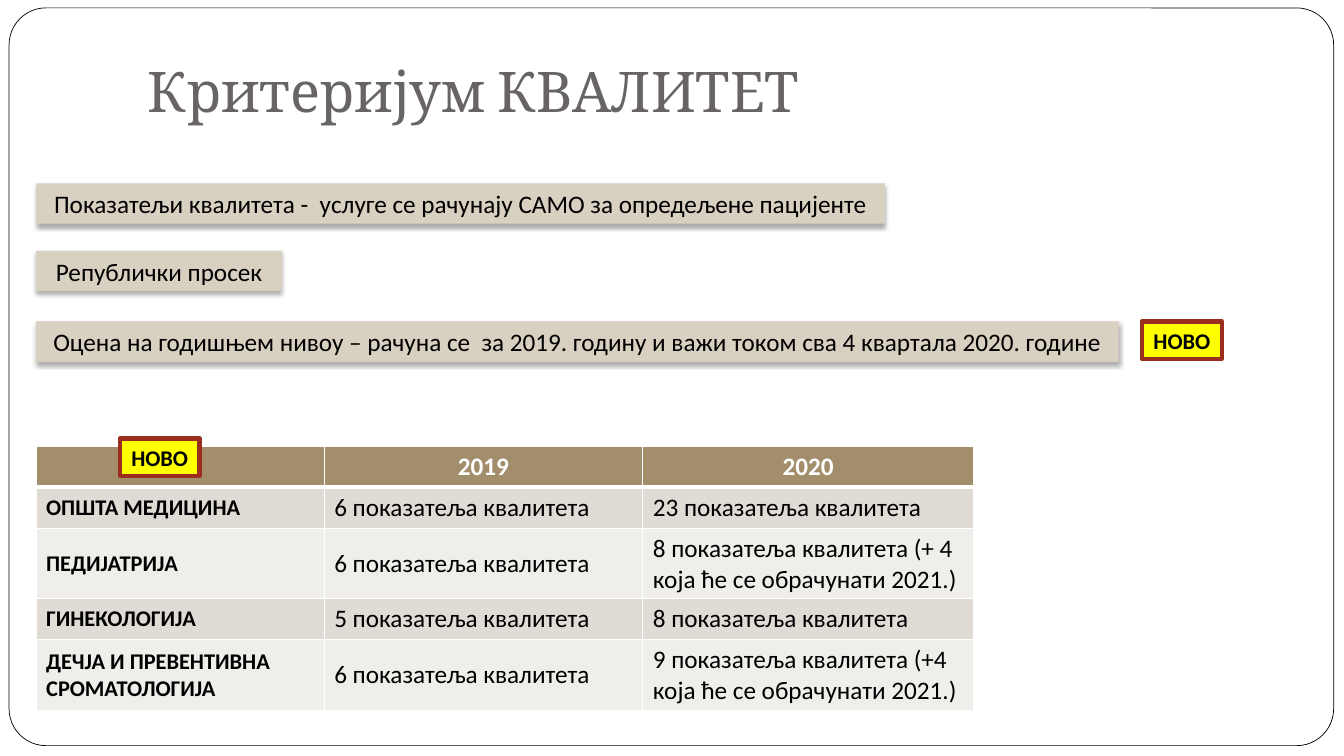
from dataclasses import dataclass

from lxml.etree import SubElement
from pptx import Presentation
from pptx.dml.color import RGBColor
from pptx.enum.shapes import MSO_SHAPE
from pptx.enum.text import MSO_ANCHOR, PP_ALIGN
from pptx.oxml import parse_xml
from pptx.oxml.ns import nsdecls, qn
from pptx.util import Cm, Pt


@dataclass(frozen=True)
class Theme:
    """Colours, fonts and type sizes of the slide."""
    head: str = "Cambria"
    body: str = "Calibri"
    black: str = "000000"
    white: str = "FFFFFF"
    grey: str = "696464"
    sand: str = "D8D0C0"
    brown: str = "A28E6A"
    bands: tuple = ("E0DBD4", "F0EEEB")
    yellow: str = "FFFF00"
    red: str = "9B2D1F"
    big: int = 40
    mid: int = 18
    small: int = 16


class Page:
    """Draws styled elements on one slide."""

    def __init__(self, slide, theme):
        self.slide = slide
        self.theme = theme

    def text(self, frame, words, size, color, bold=False, font=None, align=PP_ALIGN.LEFT):
        """Add one styled run to the first paragraph."""
        par = frame.paragraphs[0]
        par.alignment = align
        run = par.add_run()
        run.text = words
        run.font.name = font or self.theme.body
        run.font.size = Pt(size)
        run.font.bold = bold
        run.font.color.rgb = RGBColor.from_string(color)

    def shape(self, kind, box, fill, line=None, width=0):
        """Add a filled shape with an optional outline."""
        item = self.slide.shapes.add_shape(kind, *map(Cm, box))
        item.shadow.inherit = False
        item.fill.solid()
        item.fill.fore_color.rgb = RGBColor.from_string(fill)
        if line:
            item.line.color.rgb = RGBColor.from_string(line)
            item.line.width = Pt(width)
        else:
            item.line.fill.background()
        return item

    def panel(self, box):
        """Add the rounded frame around the slide."""
        look = self.theme
        item = self.shape(MSO_SHAPE.ROUNDED_RECTANGLE, box, look.white, look.black, 0.5)
        item.adjustments[0] = 0.05

    def title(self, box, words):
        """Add the heading."""
        frame = self.slide.shapes.add_textbox(*map(Cm, box)).text_frame
        frame.word_wrap = True
        frame.vertical_anchor = MSO_ANCHOR.BOTTOM
        frame.margin_bottom = Cm(0.25)
        look = self.theme
        self.text(frame, words, look.big, look.grey, font=look.head)

    def label(self, item, words, size, bold=False):
        """Centre one line of text in a shape."""
        frame = item.text_frame
        frame.word_wrap = False
        frame.vertical_anchor = MSO_ANCHOR.MIDDLE
        self.text(frame, words, size, self.theme.black, bold, align=PP_ALIGN.CENTER)

    def strip(self, box, words):
        """Add a sand strip with a soft shadow."""
        item = self.shape(MSO_SHAPE.RECTANGLE, box, self.theme.sand)
        glow = item._element.spPr.find(qn("a:effectLst"))
        shade = SubElement(glow, qn("a:outerShdw"), blurRad=str(Pt(3.5)),
                           dist=str(Pt(2.2)), dir="5400000", rotWithShape="0")
        tone = SubElement(shade, qn("a:srgbClr"), val=self.theme.black)
        SubElement(tone, qn("a:alpha"), val="32000")
        self.label(item, words, self.theme.mid)

    def badge(self, left, top, words):
        """Add a yellow badge with a red outline."""
        look = self.theme
        box = (left, top, 2.01, 0.94)
        item = self.shape(MSO_SHAPE.RECTANGLE, box, look.yellow, look.red, 3)
        self.label(item, words, look.small, True)

    def edge(self, cell, base):
        """Draw the white borders of a cell."""
        props = cell._tc.get_or_add_tcPr()
        for spot, side in enumerate("LRTB"):
            width = Pt(base if side == "B" else 1)
            props.insert(spot, parse_xml(
                f'<a:ln{side} {nsdecls("a")} w="{width}"><a:solidFill>'
                f'<a:srgbClr val="{self.theme.white}"/></a:solidFill></a:ln{side}>'))

    def table(self, left, top, wide, high, rows):
        """Add a banded table with a header row."""
        look = self.theme
        grid = self.slide.shapes.add_table(
            len(high), len(wide), Cm(left), Cm(top), Cm(sum(wide)), Cm(sum(high))).table
        for col, size in zip(grid.columns, wide):
            col.width = Cm(size)
        for r, (row, size) in enumerate(zip(rows, high)):
            grid.rows[r].height = Cm(size)
            for c, words in enumerate(row):
                cell = grid.cell(r, c)
                first = r == 0
                cell.vertical_anchor = MSO_ANCHOR.MIDDLE
                cell.fill.solid()
                fill = look.brown if first else look.bands[(r - 1) % 2]
                cell.fill.fore_color.rgb = RGBColor.from_string(fill)
                self.edge(cell, 3 if first else 1)
                if words:
                    self.text(cell.text_frame, words,
                              look.mid if first or c else look.small,
                              look.white if first else look.black,
                              first or c == 0,
                              align=PP_ALIGN.CENTER if first else PP_ALIGN.LEFT)


STRIPS = (
    (4.62, 21.39, "Показатељи квалитета -  услуге се рачунају САМО за опредељене пацијенте"),
    (6.32, 6.2, "Републички просек"),
    (8.1, 27.28, "Оцена на годишњем нивоу – рачуна се  за 2019. годину "
                 "и важи током сва 4 квартала 2020. године"),
)
ROWS = (
    ("", "2019", "2020"),
    ("ОПШТА МЕДИЦИНА", "6 показатеља квалитета", "23 показатеља квалитета"),
    ("ПЕДИЈАТРИЈА", "6 показатеља квалитета",
     "8 показатеља квалитета (+ 4 која ће се обрачунати 2021.)"),
    ("ГИНЕКОЛОГИЈА", "5 показатеља квалитета", "8 показатеља квалитета"),
    ("ДЕЧЈА И ПРЕВЕНТИВНА СРОМАТОЛОГИЈА", "6 показатеља квалитета",
     "9 показатеља квалитета (+4 која ће се обрачунати 2021.)"),
)


def main():
    """Build and save the slide."""
    deck = Presentation()
    deck.slide_width, deck.slide_height = Cm(33.87), Cm(19.05)
    page = Page(deck.slides.add_slide(deck.slide_layouts[6]), Theme())
    left = 0.91
    page.panel((0.23, 0.2, 33.38, 18.59))
    page.title((3.48, 0.2, 28.78, 3.18), "Критеријум КВАЛИТЕТ")
    for top, width, words in STRIPS:
        page.strip((left, top, width, 1.02), words)
    page.table(left, 11.25, (7.26, 8.03, 8.33), (1.03, 1.03, 1.78, 1.03, 1.78), ROWS)
    for spot in ((28.78, 8.1), (3.02, 11.05)):
        page.badge(*spot, "НОВО")
    deck.save("out.pptx")


if __name__ == "__main__":
    main()
